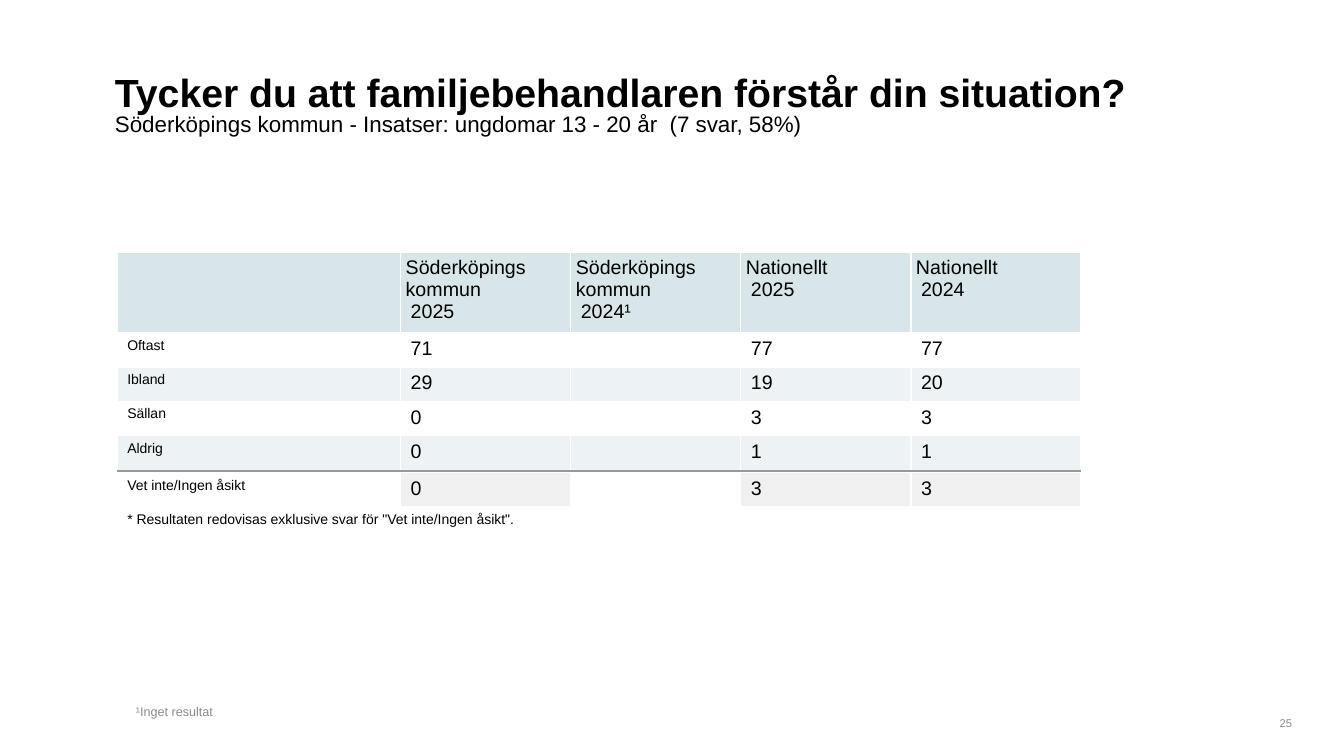
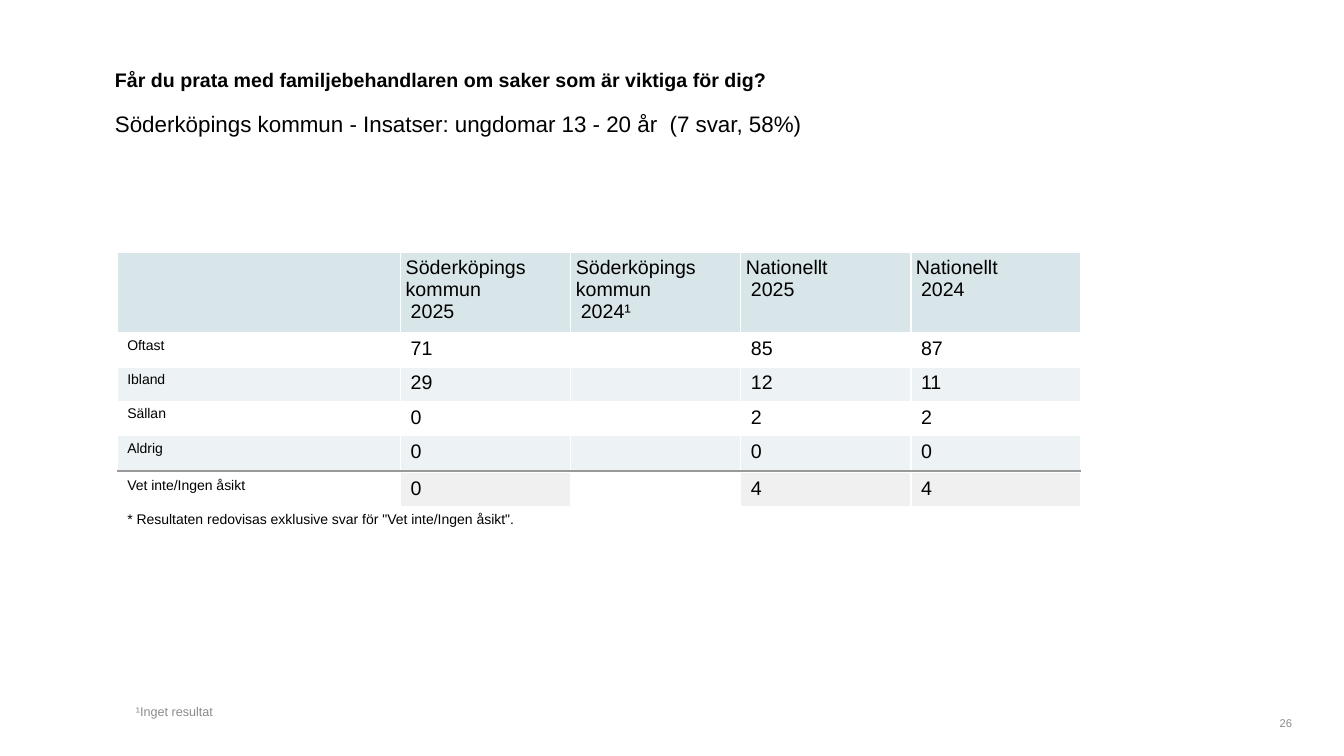
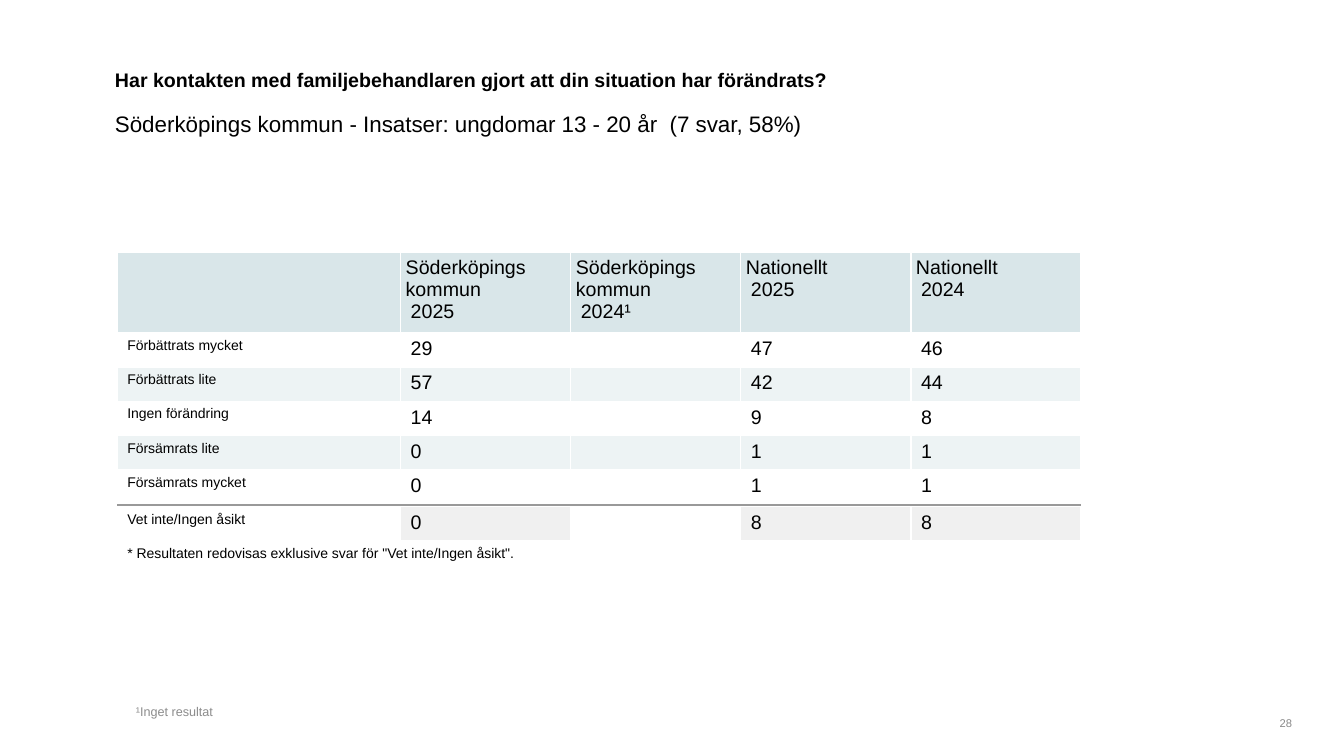
from dataclasses import dataclass

from lxml import etree
from pptx import Presentation, util as u
from pptx.dml.color import RGBColor
from pptx.enum import text as t
from pptx.oxml.ns import qn


@dataclass(frozen=True)
class Theme:
    font: str = "Arial"
    ink: str = "000000"
    note: str = "8C8C8C"
    number: str = "898989"
    header: str = "D9E6E9"
    band: str = "EDF3F4"
    rule: str = "999999"
    unsure: str = "F0F0F0"
    border: str = "FFFFFF"
    lead_size: float = 28
    question_size: float = 14
    subtitle_size: float = 16
    cell_size: float = 14
    label_size: float = 10
    note_size: float = 9
    number_size: float = 8
    rule_size: float = 1


THEME = Theme()
COLS, ROWS = 64, 36
UNIT = u.Inches(7.5) / ROWS
INSET = u.Inches(0.05)

TITLE_BOX = (5, 3, 54, 2)
SUBTITLE_BOX = (5, 5, 54, 2)
TABLE_BOX = (5.58, 12, 45.9, 12)
NOTE_BOX = (6, 15.5, 36.5, 19)
NUMBER_BOX = (60, 34, 2, 1)

COLUMN_SHARES = (13.5, 8.1, 8.1, 8.1, 8.1)
HEADER_ROW, ANSWER_ROW, RULE_ROW, REMARK_ROW = 3.85, 1.63, 0.14, 1.25

SUBTITLE = "Söderköpings kommun - Insatser: ungdomar 13 - 20 år  (7 svar, 58%)"
SOURCES = (("Söderköpings kommun", "2025"), ("Söderköpings kommun", "2024¹"),
           ("Nationellt", "2025"), ("Nationellt", "2024"))
REMARK = '* Resultaten redovisas exklusive svar för "Vet inte/Ingen åsikt".'
FOOTNOTE = "¹Inget resultat"
UNSURE = "Vet inte/Ingen åsikt"

QUESTIONS = (
    dict(number="25", size=THEME.lead_size,
         title="Tycker du att familjebehandlaren förstår din situation?",
         answers=(("Oftast", 71, "", 77, 77), ("Ibland", 29, "", 19, 20),
                  ("Sällan", 0, "", 3, 3), ("Aldrig", 0, "", 1, 1)),
         unsure=(UNSURE, 0, "", 3, 3)),
    dict(number="26", size=THEME.question_size,
         title="Får du prata med familjebehandlaren om saker som är viktiga för dig?",
         answers=(("Oftast", 71, "", 85, 87), ("Ibland", 29, "", 12, 11),
                  ("Sällan", 0, "", 2, 2), ("Aldrig", 0, "", 0, 0)),
         unsure=(UNSURE, 0, "", 4, 4)),
    dict(number="28", size=THEME.question_size,
         title="Har kontakten med familjebehandlaren gjort att din situation har förändrats?",
         answers=(("Förbättrats mycket", 29, "", 47, 46), ("Förbättrats lite", 57, "", 42, 44),
                  ("Ingen förändring", 14, "", 9, 8), ("Försämrats lite", 0, "", 1, 1),
                  ("Försämrats mycket", 0, "", 1, 1)),
         unsure=(UNSURE, 0, "", 8, 8)),
)


def grid(value):
    return u.Emu(round(value * UNIT))


def apply(target, values):
    for name, value in values.items():
        setattr(target, name, value)


def write(paragraph, content, size, color=THEME.ink, bold=False):
    if content == "":
        etree.SubElement(paragraph._p, qn("a:endParaRPr"), sz=str(int(size * 100)))
        return
    run = paragraph.add_run()
    run.text = str(content)
    apply(run.font, dict(name=THEME.font, size=u.Pt(size), bold=bold))
    run.font.color.rgb = RGBColor.from_string(color)


def add_text(slide, box, content, size, color=THEME.ink, bold=False,
             anchor=t.MSO_ANCHOR.TOP, align=t.PP_ALIGN.LEFT):
    frame = slide.shapes.add_textbox(*map(grid, box)).text_frame
    apply(frame, dict(word_wrap=True, vertical_anchor=anchor))
    frame.paragraphs[0].alignment = align
    write(frame.paragraphs[0], content, size, color, bold)


def add_border(cell, edges):
    properties = cell._tc.get_or_add_tcPr()
    for edge in "LRTB":
        line = etree.SubElement(properties, qn(f"a:ln{edge}"), w=str(u.Pt(1)))
        if edge in edges:
            fill = etree.SubElement(line, qn("a:solidFill"))
            etree.SubElement(fill, qn("a:srgbClr"), val=THEME.border)
        else:
            etree.SubElement(line, qn("a:noFill"))


def style_cell(cell, fill=None, inset=INSET, edges="LRTB"):
    add_border(cell, edges)
    apply(cell, {f"margin_{side}": inset for side in ("left", "right", "top", "bottom")})
    if fill:
        cell.fill.solid()
        cell.fill.fore_color.rgb = RGBColor.from_string(fill)
    else:
        cell.fill.background()


def indent(paragraph):
    paragraph._p.get_or_add_pPr().set("marL", str(INSET))


def fill_header(cells):
    for cell, source in zip(cells, (None, *SOURCES)):
        style_cell(cell, THEME.header)
        first = cell.text_frame.paragraphs[0]
        if source is None:
            write(first, "", THEME.cell_size)
            continue
        owner, year = source
        write(first, owner, THEME.cell_size)
        second = cell.text_frame.add_paragraph()
        indent(second)
        write(second, year, THEME.cell_size)


def fill_answer(cells, values, fills, edges="LRTB"):
    for column, (cell, value, fill) in enumerate(zip(cells, values, fills)):
        style_cell(cell, fill, edges=edges)
        paragraph = cell.text_frame.paragraphs[0]
        indent(paragraph)
        write(paragraph, value, THEME.cell_size if column else THEME.label_size)


def fill_rule(cells):
    cells[0].merge(cells[-1])
    for cell in cells:
        style_cell(cell, THEME.rule, inset=0, edges="B")
        write(cell.text_frame.paragraphs[0], "", THEME.rule_size)


def fill_remark(cells):
    cells[0].merge(cells[-1])
    fill_answer(cells, (REMARK, "", "", "", ""), (None,) * len(cells))


def add_results(slide, box, answers, unsure):
    left, top, width, _ = box
    heights = (HEADER_ROW, *(ANSWER_ROW for _ in answers), RULE_ROW, ANSWER_ROW, REMARK_ROW)
    table = slide.shapes.add_table(len(heights), len(COLUMN_SHARES),
                                   *map(grid, (left, top, width, sum(heights)))).table
    apply(table, dict(first_row=False, horz_banding=False))
    for column, share in zip(table.columns, COLUMN_SHARES):
        column.width = grid(width * share / sum(COLUMN_SHARES))
    for row, height in zip(table.rows, heights):
        row.height = grid(height)
    header, *body, rule, unsure_row, remark = [list(row.cells) for row in table.rows]
    fill_header(header)
    for index, (cells, values) in enumerate(zip(body, answers)):
        band = THEME.band if index % 2 else None
        edges = "LRT" if index == len(answers) - 1 else "LRTB"
        fill_answer(cells, values, [band] * len(cells), edges)
    fill_rule(rule)
    fills = [THEME.unsure if column and value != "" else None
             for column, value in enumerate(unsure)]
    fill_answer(unsure_row, unsure, fills)
    fill_remark(remark)


def add_heading(slide, title, size):
    add_text(slide, TITLE_BOX, title, size, bold=True)
    add_text(slide, SUBTITLE_BOX, SUBTITLE, THEME.subtitle_size)


def add_footer(slide, number):
    add_text(slide, NOTE_BOX, FOOTNOTE, THEME.note_size, THEME.note,
             anchor=t.MSO_ANCHOR.BOTTOM)
    add_text(slide, NUMBER_BOX, number, THEME.number_size, THEME.number,
             anchor=t.MSO_ANCHOR.BOTTOM, align=t.PP_ALIGN.RIGHT)


def add_question(deck, title, size, answers, unsure, number):
    slide = deck.slides.add_slide(deck.slide_layouts[6])
    add_heading(slide, title, size)
    add_results(slide, TABLE_BOX, answers, unsure)
    add_footer(slide, number)


def main():
    deck = Presentation()
    apply(deck, dict(slide_width=grid(COLS), slide_height=grid(ROWS)))
    for question in QUESTIONS:
        add_question(deck, **question)
    deck.save("out.pptx")


if __name__ == "__main__":
    main()
